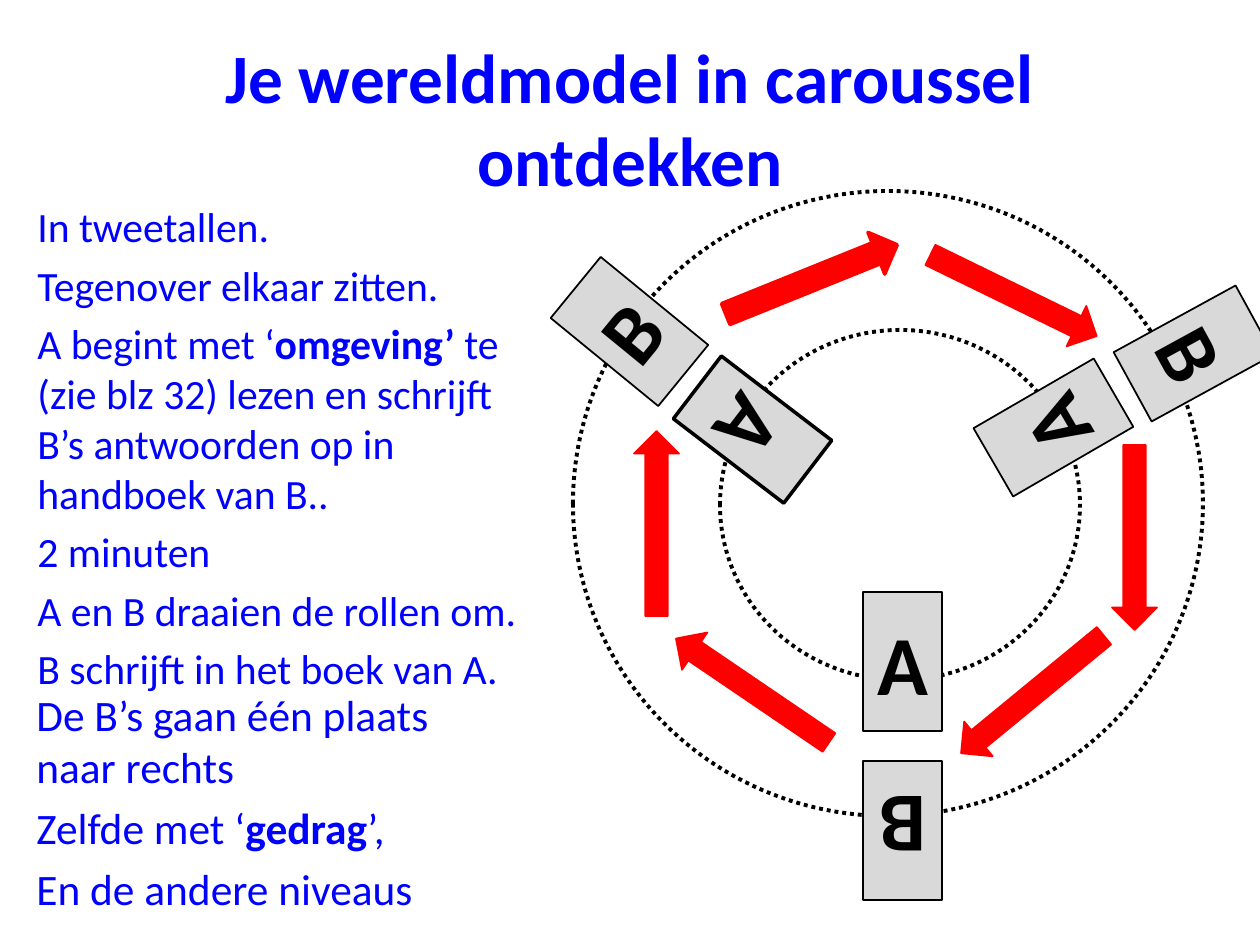
from pptx import Presentation
from pptx.dml.color import RGBColor
from pptx.enum.dml import MSO_LINE
from pptx.enum.shapes import MSO_SHAPE as SHAPE
from pptx.enum.text import MSO_ANCHOR as ANCHOR, PP_ALIGN as ALIGN
from pptx.util import Pt

SCALE = 914400 / 126
COLORS = {"text": "0000FF", "ring": "FFFFFF", "ink": "000000",
          "seat": "D9D9D9", "arrow": "FF0000"}


def px(value):
    return round(value * SCALE)


def color(name):
    return RGBColor.from_string(COLORS[name])


def set_format(target, values):
    for name, value in values.items():
        setattr(target, name, value)


class CarouselSlide:
    font = "Calibri"
    seat_size = (79, 139)
    arrow_size = (185, 45)

    def __init__(self, presentation):
        self.slide = presentation.slides.add_slide(presentation.slide_layouts[6])

    def add_runs(self, paragraph, runs, size, ink):
        for text, bold in runs:
            run = paragraph.add_run()
            run.text = text
            set_format(run.font, {"name": self.font, "size": Pt(size), "bold": bold})
            run.font.color.rgb = color(ink)

    def add_text(self, box, paragraphs, size, anchor=ANCHOR.TOP, **style):
        shape = self.slide.shapes.add_textbox(*map(px, box))
        frame = shape.text_frame
        set_format(frame, {"word_wrap": True, "vertical_anchor": anchor})
        for index, runs in enumerate(paragraphs):
            paragraph = frame.add_paragraph() if index else frame.paragraphs[0]
            set_format(paragraph, style)
            self.add_runs(paragraph, runs, size, "text")

    def add_shape(self, kind, box, fill, line, width, rotation=0):
        shape = self.slide.shapes.add_shape(kind, *map(px, box))
        shape.shadow.inherit = False
        shape.rotation = rotation
        shape.fill.solid()
        shape.fill.fore_color.rgb = color(fill)
        shape.line.color.rgb = color(line)
        shape.line.width = Pt(width)
        return shape

    def add_ring(self, *box):
        ring = self.add_shape(SHAPE.OVAL, box, "ring", "ink", 2.25)
        ring.line.dash_style = MSO_LINE.ROUND_DOT

    def add_seat(self, letter, left, top, rotation, width=1):
        box = (left, top, *self.seat_size)
        seat = self.add_shape(SHAPE.RECTANGLE, box, "seat", "ink", width, rotation)
        frame = seat.text_frame
        set_format(frame, {"word_wrap": False, "vertical_anchor": ANCHOR.MIDDLE,
                           "margin_left": 0, "margin_right": 0})
        paragraph = frame.paragraphs[0]
        paragraph.alignment = ALIGN.CENTER
        self.add_runs(paragraph, [(letter, True)], 48, "ink")

    def add_arrow(self, left, top, rotation, width=1):
        box = (left, top, *self.arrow_size)
        self.add_shape(SHAPE.RIGHT_ARROW, box, "arrow", "arrow", width, rotation)


def main():
    presentation = Presentation()
    set_format(presentation, {"slide_width": px(1260), "slide_height": px(945)})
    carousel = CarouselSlide(presentation)

    carousel.add_text((63, 38, 1134, 158),
                      [[("Je wereldmodel in caroussel ontdekken", True)]],
                      39.6, anchor=ANCHOR.MIDDLE, alignment=ALIGN.CENTER)
    carousel.add_text((25, 195, 510, 466), [
        [("In tweetallen.", False)],
        [("Tegenover elkaar zitten.", False)],
        [("A begint met ‘", False), ("omgeving’ ", True),
         ("te (zie blz 32) lezen en schrijft B’s antwoorden op in "
          "handboek van B..", False)],
        [("2 minuten", False)],
        [("A en B draaien de rollen om.", False)],
        [("B schrijft in het boek van A.", False)],
    ], 23.8, space_before=Pt(4.8))

    carousel.add_ring(573, 191, 630, 625)
    carousel.add_ring(720, 330, 360, 350)

    for seat in [("A", 863, 592, 0), ("A", 1014, 358, 239.9),
                 ("A", 713, 360, 127.4, 2), ("B", 863, 761, 180),
                 ("B", 1154, 284, 61.3), ("B", 590, 262, 309.3)]:
        carousel.add_seat(*seat)

    for arrow in [(719, 257, 338, 2), (921, 273, 26), (1042, 515, 90),
                  (940, 672, 140.6), (564, 501, 270), (660, 668, 214.2)]:
        carousel.add_arrow(*arrow)

    carousel.add_text((24, 682, 478, 217), [
        [("De B’s gaan één plaats naar rechts", False)],
        [("Zelfde met ‘", False), ("gedrag", True), ("’,", False)],
        [("En de andere niveaus", False)],
    ], 24.8, space_before=Pt(5))

    presentation.save("out.pptx")


if __name__ == "__main__":
    main()
